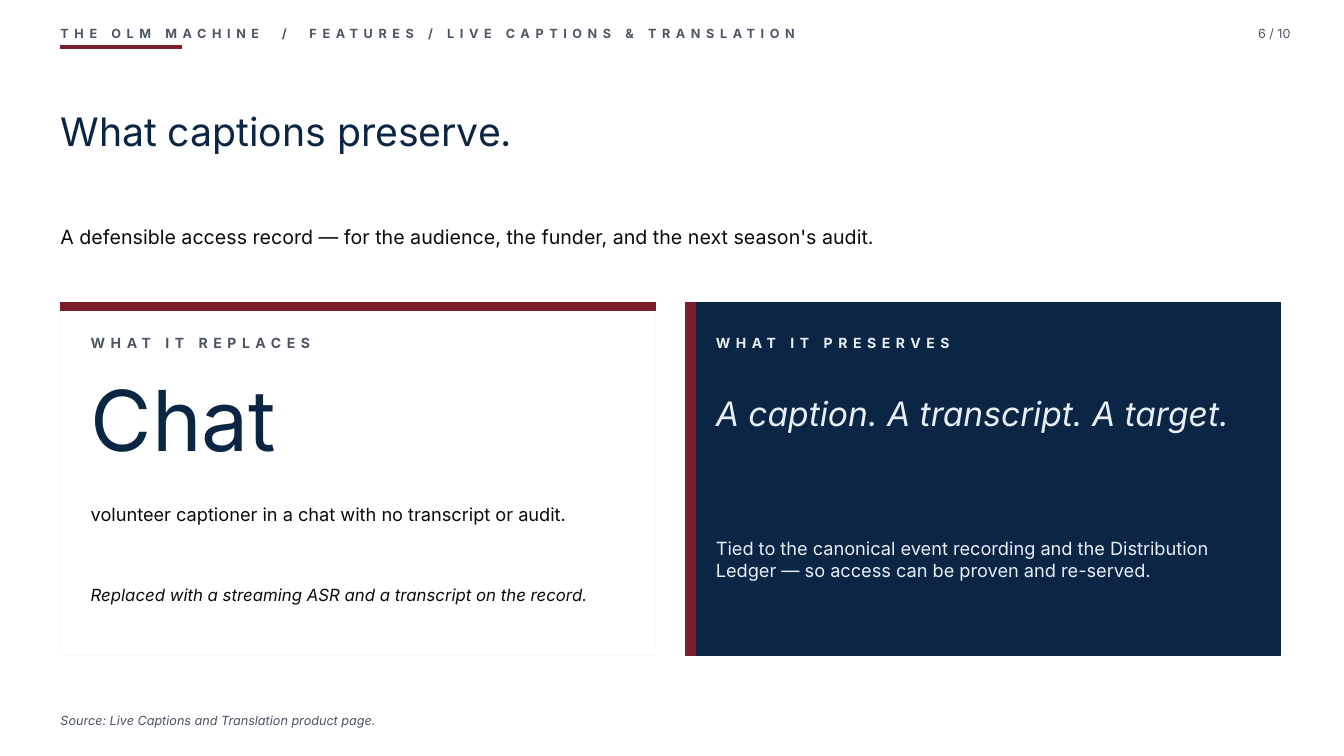
from dataclasses import dataclass

from pptx import Presentation
from pptx import util as u
from pptx.dml.color import RGBColor
from pptx.enum import shapes, text
from pptx.slide import Slide

PX = 9144  # EMU per px, 100 px to the inch


@dataclass(frozen=True)
class Theme:
    font: str = "Inter"
    navy: str = "0B2545"
    maroon: str = "7B1E2B"
    slate: str = "4B5563"
    ink: str = "0B0B0E"
    ice: str = "E8EEF6"
    white: str = "FFFFFF"
    ivory: str = "FAFAF7"
    small: int = 9
    label: int = 10
    note: int = 12
    body: int = 13
    lead: int = 14
    quote: int = 24
    title: int = 28
    hero: int = 60
    tracking: int = 4


T = Theme()


@dataclass(frozen=True)
class Bar:
    left: int
    top: int
    width: int
    height: int
    fill: str
    line: str


@dataclass(frozen=True)
class Label:
    left: int
    top: int
    width: int
    height: int
    words: str
    size: int
    color: str
    bold: bool = False
    italic: bool = False
    tracked: bool = False
    right: bool = False


@dataclass(frozen=True)
class Line:
    """One text line of a card, placed by its top and height."""
    top: int
    height: int
    words: str
    size: int
    color: str
    italic: bool = False


@dataclass(frozen=True)
class Card:
    heading: str
    heading_color: str
    fill: str
    line: str
    accent_width: int
    accent_height: int
    lines: tuple[Line, ...]


MARGIN, CONTENT_W = 60, 1210
CARD_TOP, CARD_W, CARD_H, CARD_GAP = 300, 590, 350, 30
CARD_PAD, CARD_TEXT_W = 30, 540

LABELS = (
    Label(MARGIN, 18, 900, 30,
          "THE OLM MACHINE  /  FEATURES / LIVE CAPTIONS & TRANSLATION",
          T.small, T.slate, bold=True, tracked=True),
    Label(1220, 18, 60, 30, "6 / 10", T.small, T.slate, right=True),
    Label(MARGIN, 85, CONTENT_W, 90, "What captions preserve.", T.title, T.navy),
    Label(MARGIN, 185, CONTENT_W, 100,
          "A defensible access record — for the audience, the funder, "
          "and the next season's audit.", T.lead, T.ink),
    Label(MARGIN, 700, CONTENT_W, 30,
          "Source: Live Captions and Translation product page.",
          T.small, T.slate, italic=True),
)

CARDS = (
    Card("WHAT IT REPLACES", T.slate, T.white, T.ivory, CARD_W, 8, (
        Line(355, 120, "Chat", T.hero, T.navy),
        Line(485, 50, "volunteer captioner in a chat with no transcript or audit.",
             T.body, T.ink),
        Line(555, 70, "Replaced with a streaming ASR and a transcript on the record.",
             T.note, T.ink, italic=True),
    )),
    Card("WHAT IT PRESERVES", T.ice, T.navy, T.navy, 10, CARD_H, (
        Line(360, 100, "A caption. A transcript. A target.", T.quote, T.ice, italic=True),
        Line(470, 170, "Tied to the canonical event recording and the Distribution "
             "Ledger — so access can be proven and re-served.", T.body, T.ice),
    )),
)


def draw_bar(s: Slide, bar: Bar) -> None:
    sp = s.shapes.add_shape(shapes.MSO_SHAPE.RECTANGLE, bar.left * PX, bar.top * PX,
                            bar.width * PX, bar.height * PX)
    sp.shadow.inherit = False
    sp.fill.solid()
    sp.fill.fore_color.rgb = RGBColor.from_string(bar.fill)
    sp.line.color.rgb = RGBColor.from_string(bar.line)
    sp.line.width = u.Pt(1)


def draw_label(s: Slide, label: Label) -> None:
    sp = s.shapes.add_textbox(label.left * PX, label.top * PX,
                              label.width * PX, label.height * PX)
    tf = sp.text_frame
    tf.word_wrap = True
    tf.vertical_anchor = text.MSO_ANCHOR.MIDDLE
    tf.margin_left = tf.margin_top = tf.margin_right = tf.margin_bottom = 0
    p = tf.paragraphs[0]
    if label.right:
        p.alignment = text.PP_ALIGN.RIGHT
    r = p.add_run()
    r.text = label.words
    r.font.name = T.font
    r.font.size = u.Pt(label.size)
    r.font.bold = label.bold
    r.font.italic = label.italic
    r.font.color.rgb = RGBColor.from_string(label.color)
    if label.tracked:
        r._r.get_or_add_rPr().set("spc", str(T.tracking * 100))


def draw_card(s: Slide, card: Card, left: int) -> None:
    draw_bar(s, Bar(left, CARD_TOP, CARD_W, CARD_H, card.fill, card.line))
    draw_bar(s, Bar(left, CARD_TOP, card.accent_width, card.accent_height,
                    T.maroon, T.maroon))
    text_left = left + CARD_PAD
    draw_label(s, Label(text_left, CARD_TOP + 25, CARD_TEXT_W, 30, card.heading,
                        T.label, card.heading_color, bold=True, tracked=True))
    for line in card.lines:
        draw_label(s, Label(text_left, line.top, CARD_TEXT_W, line.height, line.words,
                            line.size, line.color, italic=line.italic))


def main() -> None:
    prs = Presentation()
    prs.slide_width, prs.slide_height = 1333 * PX, 750 * PX
    s = prs.slides.add_slide(prs.slide_layouts[6])
    s.background.fill.solid()
    s.background.fill.fore_color.rgb = RGBColor.from_string(T.white)
    draw_bar(s, Bar(MARGIN, 45, 120, 3, T.maroon, T.maroon))
    for label in LABELS:
        draw_label(s, label)
    for i, card in enumerate(CARDS):
        draw_card(s, card, MARGIN + i * (CARD_W + CARD_GAP))
    prs.save("out.pptx")


if __name__ == "__main__":
    main()
